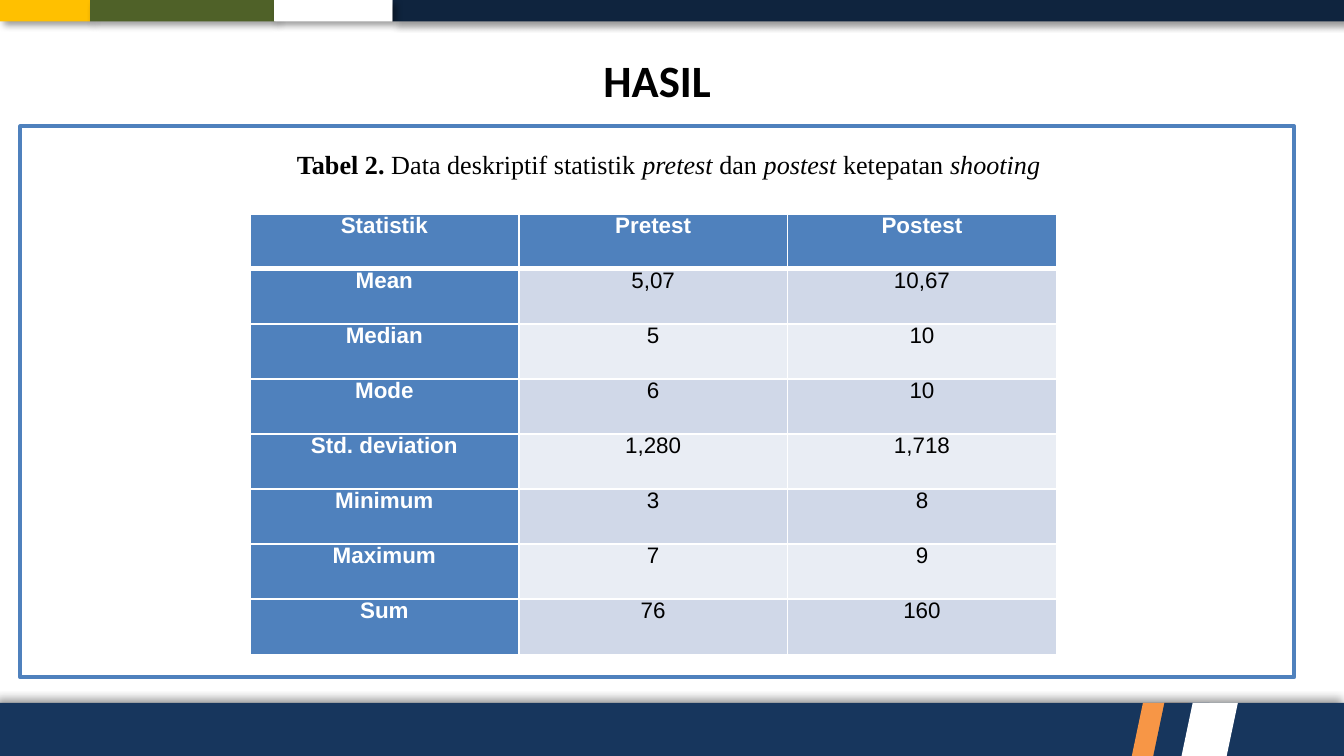
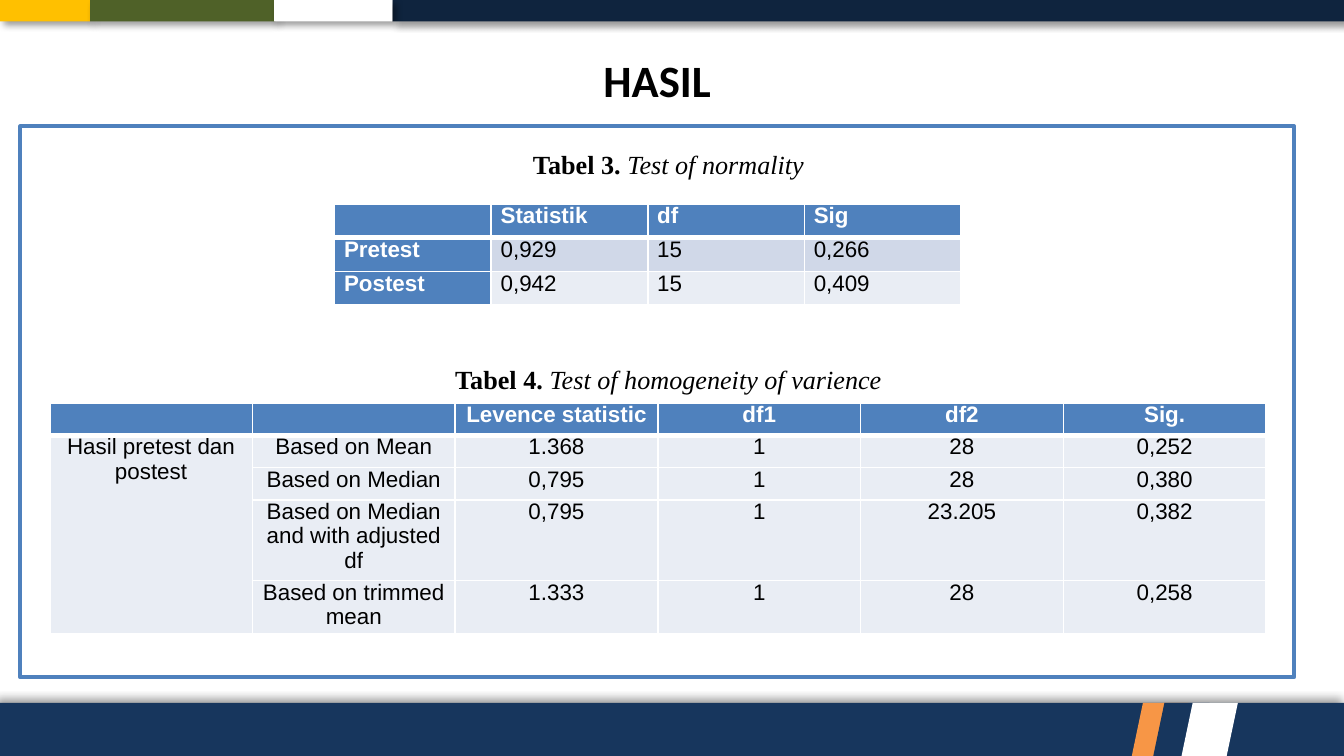
"""Build two result slides with captioned statistics tables."""
from dataclasses import dataclass
from typing import Any, NamedTuple

from lxml.etree import SubElement
from pptx import Presentation
from pptx.dml.color import RGBColor
from pptx.enum.shapes import MSO_SHAPE as Preset
from pptx.enum.text import MSO_ANCHOR as Anchor, MSO_AUTO_SIZE as AutoSize, PP_ALIGN as Align
from pptx.oxml.ns import qn
from pptx.util import Inches, Pt


@dataclass(frozen=True)
class Theme:
    """Colours, fonts and type sizes."""
    white: str = "FFFFFF"
    black: str = "000000"
    midnight: str = "0F243E"
    navy: str = "17365D"
    yellow: str = "FFC000"
    olive: str = "4F6128"
    orange: str = "F79646"
    blue: str = "4F81BD"
    row_dark: str = "D0D8E8"
    row_light: str = "E9EDF4"
    title_font: str = "Calibri"
    caption_font: str = "Times New Roman"
    table_font: str = "Arial"
    title_size: int = 24
    caption_size: int = 14
    table_size: int = 12
    line_spacing: int = 13


THEME = Theme()


class Box(NamedTuple):
    """Place and size in inches."""
    left: float
    top: float
    width: float
    height: float

    def lengths(self) -> list[int]:
        """Return the four values as lengths."""
        return [Inches(value) for value in self]


class Block(NamedTuple):
    """A filled shape of the slide frame."""
    box: Box
    fill: str
    preset: Preset = Preset.RECTANGLE
    shadow_angle: int | None = None


class Words(NamedTuple):
    """A stretch of caption text with one style."""
    text: str
    bold: bool = False
    italic: bool = False


@dataclass(frozen=True)
class TableBlock:
    """A caption with the table below it."""
    caption_top: float
    caption: list[Words]
    left: float
    top: float
    width: float
    row_heights: list[float]
    rows: list[list[str]]
    align: Align = Align.CENTER
    row_headers: bool = True
    merge_first_column: bool = False


STRIPE_SIZE = (0.42, 0.4)
FOOTER_TOP = 5.23
FRAME = [
    Block(Box(2.92, 0, 7.08, 0.16), THEME.midnight, shadow_angle=45),
    Block(Box(0, 0, 0.67, 0.16), THEME.yellow, shadow_angle=45),
    Block(Box(0.67, 0, 1.38, 0.16), THEME.olive, shadow_angle=45),
    Block(Box(2.04, 0, 0.88, 0.16), THEME.white, shadow_angle=45),
    Block(Box(0, FOOTER_TOP, 10, 0.4), THEME.navy, shadow_angle=225),
] + [
    Block(Box(left, FOOTER_TOP, *STRIPE_SIZE), fill, Preset.FLOWCHART_DATA)
    for left, fill in ((8.42, THEME.orange), (8.58, THEME.navy), (8.79, THEME.white))
]

SLIDES = [
    [TableBlock(
        1.11,
        [Words("Tabel 2.", bold=True), Words(" Data deskriptif statistik "),
         Words("pretest ", italic=True), Words("dan "), Words("postest ", italic=True),
         Words("ketepatan "), Words("shooting", italic=True)],
        1.86, 1.59, 6, [0.41] * 8,
        [["Statistik", "Pretest", "Postest"],
         ["Mean", "5,07", "10,67"],
         ["Median", "5", "10"],
         ["Mode", "6", "10"],
         ["Std. deviation", "1,280", "1,718"],
         ["Minimum", "3", "8"],
         ["Maximum", "7", "9"],
         ["Sum", "76", "160"]],
    )],
    [TableBlock(
        1.11,
        [Words("Tabel 3. ", bold=True), Words("Test of normality", italic=True)],
        2.49, 1.52, 4.66, [0.25] * 3,
        [["", "Statistik", "df", "Sig"],
         ["Pretest", "0,929", "15", "0,266"],
         ["Postest", "0,942", "15", "0,409"]],
        align=Align.JUSTIFY,
    ), TableBlock(
        2.71,
        [Words("Tabel 4. ", bold=True), Words("Test of homogeneity of varience", italic=True)],
        0.37, 3, 9.05, [0.24, 0.24, 0.24, 0.6, 0.4],
        [["", "", "Levence statistic", "df1", "df2", "Sig."],
         ["Hasil pretest dan postest", "Based on Mean", "1.368", "1", "28", "0,252"],
         ["", "Based on Median", "0,795", "1", "28", "0,380"],
         ["", "Based on Median and with adjusted df", "0,795", "1", "23.205", "0,382"],
         ["", "Based on trimmed mean", "1.333", "1", "28", "0,258"]],
        row_headers=False, merge_first_column=True,
    )],
]


def set_values(target: Any, values: dict[str, Any]) -> None:
    """Set each named attribute on the target."""
    for name, value in values.items():
        setattr(target, name, value)


def paint(fill: Any, colour: str) -> None:
    """Give a fill one solid colour."""
    fill.solid()
    fill.fore_color.rgb = RGBColor.from_string(colour)


def style_font(font: Any, name: str, size: int, colour: str, bold: bool, italic: bool = False) -> None:
    """Set typeface, size, colour and weight."""
    set_values(font, {"name": name, "size": Pt(size), "bold": bold, "italic": italic})
    font.color.rgb = RGBColor.from_string(colour)


def add_shadow(shape: Any, angle: int) -> None:
    """Add a soft black shadow falling at an angle in degrees."""
    effects = shape.element.spPr.find(qn("a:effectLst"))
    shadow = SubElement(effects, qn("a:outerShdw"), blurRad=str(Pt(4)), dist=str(Pt(3)),
                        dir=str(angle * 60000), algn="ctr", rotWithShape="0")
    colour = SubElement(shadow, qn("a:srgbClr"), val=THEME.black)
    SubElement(colour, qn("a:alpha"), val="40000")


def add_block(slide: Any, block: Block) -> Any:
    """Draw a filled shape without an outline."""
    shape = slide.shapes.add_shape(block.preset, *block.box.lengths())
    shape.shadow.inherit = False
    paint(shape.fill, block.fill)
    shape.line.fill.background()
    if block.shadow_angle is not None:
        add_shadow(shape, block.shadow_angle)
    return shape


def move_frame_to_layout(slide: Any) -> None:
    """Draw the shared bands once and hand them to the layout."""
    layout = slide.slide_layout
    for placeholder in list(layout.placeholders):
        if placeholder.placeholder_format.idx != 0:
            layout.shapes.element.remove(placeholder.element)
    frame_shapes = [add_block(slide, block) for block in FRAME]
    for shape in frame_shapes:
        layout.shapes.element.append(shape.element)


def format_title(slide: Any) -> None:
    """Place the title and write its text."""
    title = slide.shapes.title
    set_values(title, dict(zip(("left", "top", "width", "height"),
                               Box(2.93, 0.35, 3.92, 0.48).lengths())))
    set_values(title.text_frame, {"text": "HASIL", "vertical_anchor": Anchor.MIDDLE,
                                  "auto_size": AutoSize.NONE})
    paragraph = title.text_frame.paragraphs[0]
    paragraph.alignment = Align.CENTER
    style_font(paragraph.runs[0].font, THEME.title_font, THEME.title_size, THEME.black, True)


def add_panel(slide: Any) -> None:
    """Draw the outlined panel behind the tables."""
    panel = add_block(slide, Block(Box(0.15, 0.94, 9.48, 4.1), THEME.white))
    paint(panel.line.fill, THEME.blue)
    panel.line.width = Pt(2)


def add_caption(slide: Any, top: float, caption: list[Words]) -> None:
    """Write a centred table caption."""
    frame = slide.shapes.add_textbox(*Box(1.86, top, 6.23, 0.28).lengths()).text_frame
    set_values(frame, {"word_wrap": True, "auto_size": AutoSize.SHAPE_TO_FIT_TEXT})
    paragraph = frame.paragraphs[0]
    set_values(paragraph, {"alignment": Align.CENTER, "line_spacing": Pt(THEME.line_spacing)})
    for words in caption:
        run = paragraph.add_run()
        run.text = words.text
        style_font(run.font, THEME.caption_font, THEME.caption_size, THEME.black,
                   words.bold, words.italic)


def add_borders(cell: Any, row: int) -> None:
    """Draw white cell borders, thick below the header row."""
    widths = {"L": 1, "R": 1, "T": 3 if row == 1 else 1, "B": 3 if row == 0 else 1}
    properties = cell._tc.get_or_add_tcPr()
    for side, width in widths.items():
        line = SubElement(properties, qn(f"a:ln{side}"), w=str(Pt(width)))
        SubElement(SubElement(line, qn("a:solidFill")), qn("a:srgbClr"), val=THEME.white)


def format_cell(cell: Any, text: str, row: int, column: int, block: TableBlock) -> None:
    """Fill a cell and write its text."""
    header = row == 0 or (block.row_headers and column == 0)
    banded = block.row_headers and row % 2 == 1
    add_borders(cell, row)
    paint(cell.fill, THEME.blue if header else THEME.row_dark if banded else THEME.row_light)
    set_values(cell, {"margin_left": Inches(0.07), "margin_right": Inches(0.07),
                      "margin_top": 0, "margin_bottom": 0})
    paragraph = cell.text_frame.paragraphs[0]
    set_values(paragraph, {"alignment": block.align, "line_spacing": Pt(THEME.line_spacing)})
    if text:
        run = paragraph.add_run()
        run.text = text
        style_font(run.font, THEME.table_font, THEME.table_size,
                   THEME.white if header else THEME.black, header)
    else:
        SubElement(paragraph._p, qn("a:endParaRPr"), sz=str(THEME.table_size * 100))


def add_table_block(slide: Any, block: TableBlock) -> None:
    """Draw a caption and its table."""
    add_caption(slide, block.caption_top, block.caption)
    column_count = len(block.rows[0])
    box = Box(block.left, block.top, block.width, sum(block.row_heights))
    table = slide.shapes.add_table(len(block.rows), column_count, *box.lengths()).table
    table.horz_banding = False
    for column in table.columns:
        column.width = Inches(block.width / column_count)
    for row, height in zip(table.rows, block.row_heights):
        row.height = Inches(height)
    for row_index, texts in enumerate(block.rows):
        for column_index, text in enumerate(texts):
            format_cell(table.cell(row_index, column_index), text, row_index, column_index, block)
    if block.merge_first_column:
        table.cell(1, 0).merge(table.cell(len(block.rows) - 1, 0))


def main() -> None:
    """Build and save the presentation."""
    presentation = Presentation()
    set_values(presentation, {"slide_width": Inches(10), "slide_height": Inches(10) * 9 // 16})
    layout = presentation.slide_layouts[5]
    for index, blocks in enumerate(SLIDES):
        slide = presentation.slides.add_slide(layout)
        if index == 0:
            move_frame_to_layout(slide)
        format_title(slide)
        add_panel(slide)
        for block in blocks:
            add_table_block(slide, block)
    presentation.save("out.pptx")


if __name__ == "__main__":
    main()
